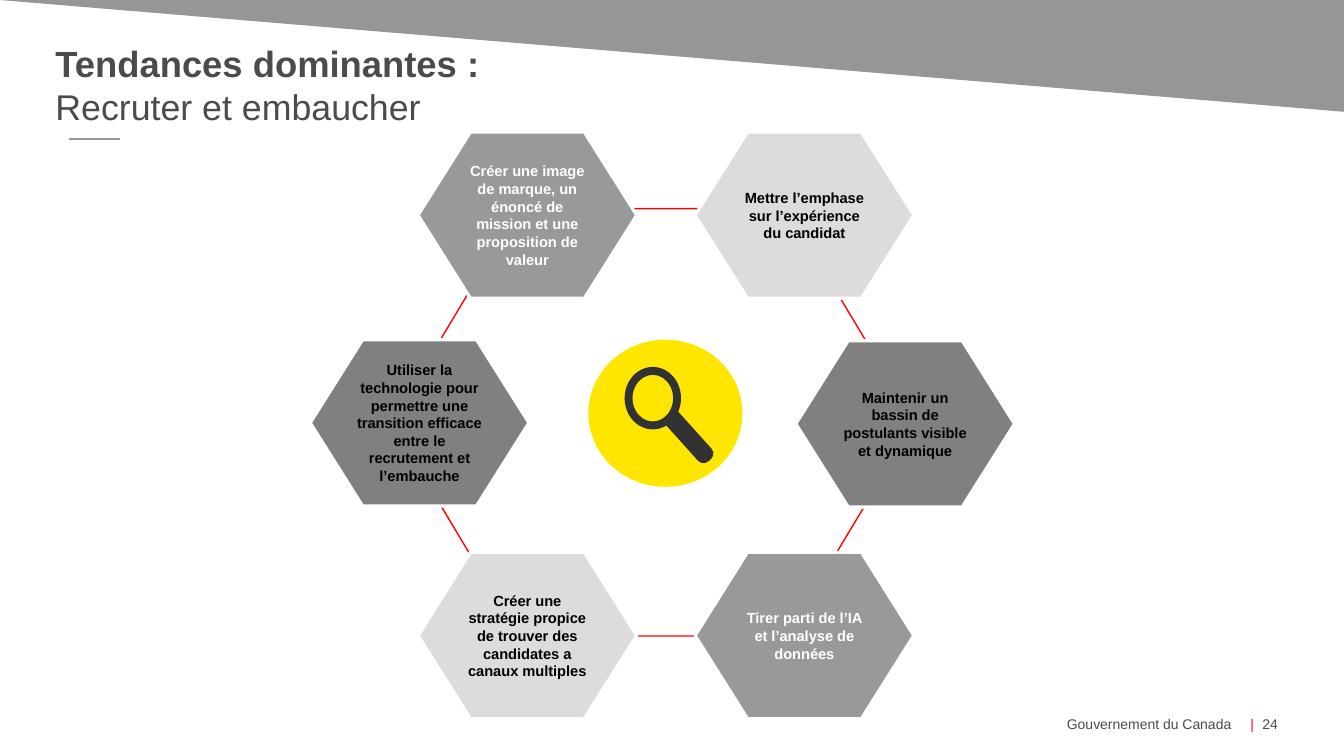
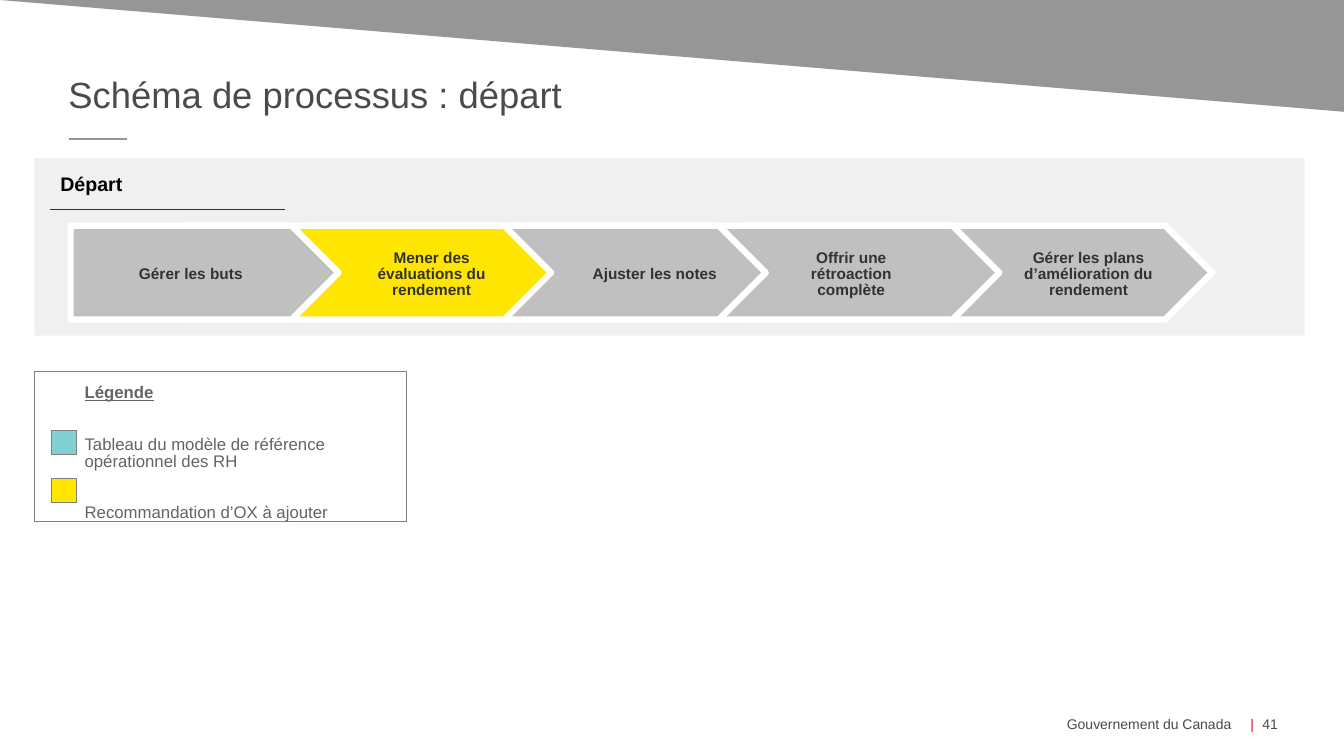
"""Build two French HR slides: a hiring trends ring and a departure process."""
import pptx
import pptx.util
import pptx.dml.color
import pptx.enum.shapes
import pptx.enum.text
import pptx.oxml.ns
import lxml.etree

SHAPE = pptx.enum.shapes.MSO_SHAPE
ALIGN = pptx.enum.text.PP_ALIGN
ANCHOR = pptx.enum.text.MSO_ANCHOR
Pt = pptx.util.Pt
PX = 9144

COLORS = {
    "band": "969696", "text": "4B4B4B", "red": "E60F2D", "ring": "FF0000",
    "light": "DCDCDC", "mid": "999999", "dark": "808080", "yellow": "FFE600",
    "ink": "323232", "panel": "F0F0F0", "step": "C0C0C0", "teal": "7FD1D6",
    "legend": "646464", "white": "FFFFFF", "black": "000000",
}
FONT = "Arial"

TRENDS = [
    ("Mettre l’emphase sur l’expérience du candidat", 690, 131, "light", "black"),
    ("Maintenir un bassin de postulants visible et dynamique", 790, 338, "dark", "black"),
    ("Tirer parti de l’IA et l’analyse de données", 690, 548, "mid", "white"),
    ("Créer une stratégie propice de trouver des candidates a canaux multiples",
     415, 548, "light", "black"),
    ("Utiliser la technologie pour permettre une transition efficace entre le "
     "recrutement et l’embauche", 308, 337, "dark", "black"),
    ("Créer une image de marque, un énoncé de mission et une proposition de valeur",
     415, 131, "mid", "white"),
]
HEXAGON_SIZE = (217, 165)

STEPS = [
    ("Gérer les buts", 70, 336, "step", 96, 187),
    ("Mener des évaluations du rendement", 179, 547, "yellow", 358, 141),
    ("Ajuster les notes", 302, 760, "step", 586, 128),
    ("Offrir une rétroaction complète", 505, 992, "step", 788, 114),
    ("Gérer les plans d’amélioration du rendement", 738, 1203, "step", 1012, 137),
]

LEGEND = ["Légende", "Tableau du modèle de référence opérationnel des RH",
          "Recommandation d’OX à ajouter"]
SWATCHES = ["teal", "yellow"]


def px(*lengths):
    return [round(length * PX) for length in lengths]


def rgb(name):
    return pptx.dml.color.RGBColor.from_string(COLORS[name])


def style(paragraph, size, color, bold=False, align=ALIGN.LEFT):
    paragraph.alignment = align
    font = paragraph.font
    font.name, font.size, font.bold = FONT, Pt(size), bold
    font.color.rgb = rgb(color)


def add_shape(slide, kind, box, fill=None, line=None, weight=1.0):
    shape = slide.shapes.add_shape(kind, *px(*box))
    shape.shadow.inherit = False
    if fill:
        shape.fill.solid()
        shape.fill.fore_color.rgb = rgb(fill)
    else:
        shape.fill.background()
    if line:
        shape.line.color.rgb = rgb(line)
        shape.line.width = Pt(weight)
    else:
        shape.line.fill.background()
    return shape


def add_text(slide, box, lines, anchor=ANCHOR.TOP, insets=(0, 0, 0, 0)):
    frame = slide.shapes.add_textbox(*px(*box)).text_frame
    frame.word_wrap = True
    frame.vertical_anchor = anchor
    (frame.margin_left, frame.margin_top,
     frame.margin_right, frame.margin_bottom) = px(*insets)
    frame.text = "\n".join(lines)
    return frame.paragraphs


def add_rule(slide, left, right, y, color, weight):
    rule = slide.shapes.add_connector(
        pptx.enum.shapes.MSO_CONNECTOR.STRAIGHT, *px(left, y, right, y))
    rule.line.color.rgb = rgb(color)
    rule.line.width = Pt(weight)
    lxml.etree.SubElement(rule._element.spPr, pptx.oxml.ns.qn("a:effectLst"))


def add_footer(slide, number):
    footer = add_text(slide, (1059, 707, 220, 22), [""], ANCHOR.MIDDLE)[0]
    tabs = lxml.etree.SubElement(
        footer._p.get_or_add_pPr(), pptx.oxml.ns.qn("a:tabLst"))
    for stop in px(182, 194):
        lxml.etree.SubElement(
            tabs, pptx.oxml.ns.qn("a:tab"), pos=str(stop), algn="l")
    style(footer, 10, "text")
    for words, color in (("Gouvernement du Canada\t", "text"),
                         ("|\t", "red"), (number, "text")):
        run = footer.add_run()
        run.text = words
        run.font.color.rgb = rgb(color)


def new_slide(deck, number, title_box, title, rule_right):
    slide = deck.slides.add_slide(deck.slide_layouts[6])
    band = add_shape(slide, SHAPE.RIGHT_TRIANGLE, (0, 0, 1335, 111), "band")
    band.rotation = 180
    add_footer(slide, number)
    paragraphs = add_text(slide, title_box, [words for words, _, _ in title])
    for paragraph, (_, size, bold) in zip(paragraphs, title):
        style(paragraph, size, "text", bold)
    add_rule(slide, 68, rule_right, 138, "band", 1.5)
    return slide


def add_magnifier(slide):
    add_shape(slide, SHAPE.OVAL, (584, 337, 153, 146), "yellow")
    lens = add_shape(slide, SHAPE.DONUT, (620, 364, 56, 62), "ink")
    lens.adjustments[0] = 0.14
    handle = add_shape(slide, SHAPE.ROUND_2_SAME_RECTANGLE, (676, 406, 18, 58), "ink")
    handle.adjustments[0] = 0.4
    handle.rotation = 138


def build_trends(deck):
    slide = new_slide(deck, "24", (55, 41, 763, 87),
                      [("Tendances dominantes :", 26, True),
                       ("Recruter et embaucher", 25.5, False)], 119)
    ring = add_shape(slide, SHAPE.HEXAGON, (388, 207, 520, 424), None, "ring")
    ring.adjustments[0] = 0.3
    add_magnifier(slide)
    for trend, left, top, fill, color in TRENDS:
        hexagon = add_shape(slide, SHAPE.HEXAGON, (left, top, *HEXAGON_SIZE),
                            fill, "white", 2.25)
        hexagon.adjustments[0] = 0.315
        frame = hexagon.text_frame
        frame.word_wrap = True
        frame.vertical_anchor = ANCHOR.MIDDLE
        frame.text = trend
        style(frame.paragraphs[0], 10.5, color, True, ALIGN.CENTER)


def build_process(deck):
    slide = new_slide(deck, "41", (68, 72, 1090, 44),
                      [("Schéma de processus : départ", 26, False)], 126)
    add_shape(slide, SHAPE.RECTANGLE, (34, 157, 1261, 176), "panel")
    heading = add_text(slide, (50, 163, 356, 39), ["Départ"],
                       ANCHOR.MIDDLE, (10, 5, 10, 5))[0]
    style(heading, 14, "black", True)
    add_rule(slide, 50, 283, 208, "ink", 1)

    for _, left, tip, fill, _, _ in reversed(STEPS):
        add_shape(slide, SHAPE.PENTAGON, (left, 224, tip - left, 93),
                  fill, "white", 4.5)
    for step, _, _, _, left, width in STEPS:
        label = add_text(slide, (left, 245, width, 51), [step],
                         ANCHOR.MIDDLE, (0, 4, 0, 0))[0]
        label.line_spacing = 0.85
        style(label, 11, "ink", True, ALIGN.CENTER)

    add_shape(slide, SHAPE.RECTANGLE, (34, 369, 370, 148), None, "dark", 0.75)
    entries = add_text(slide, (84, 378, 320, 141), LEGEND, insets=(0, 4, 0, 0))
    for index, entry in enumerate(entries):
        entry.line_spacing = 0.85
        if index:
            entry.space_before = Pt(24.5)
        style(entry, 12, "legend", index == 0)
    entries[0].font.underline = True
    for index, swatch in enumerate(SWATCHES):
        add_shape(slide, SHAPE.RECTANGLE, (51, 427 + 48 * index, 25, 24),
                  swatch, "dark", 0.75)


def main():
    deck = pptx.Presentation()
    deck.slide_width, deck.slide_height = px(1334, 750)
    build_trends(deck)
    build_process(deck)
    deck.save("out.pptx")


if __name__ == "__main__":
    main()
